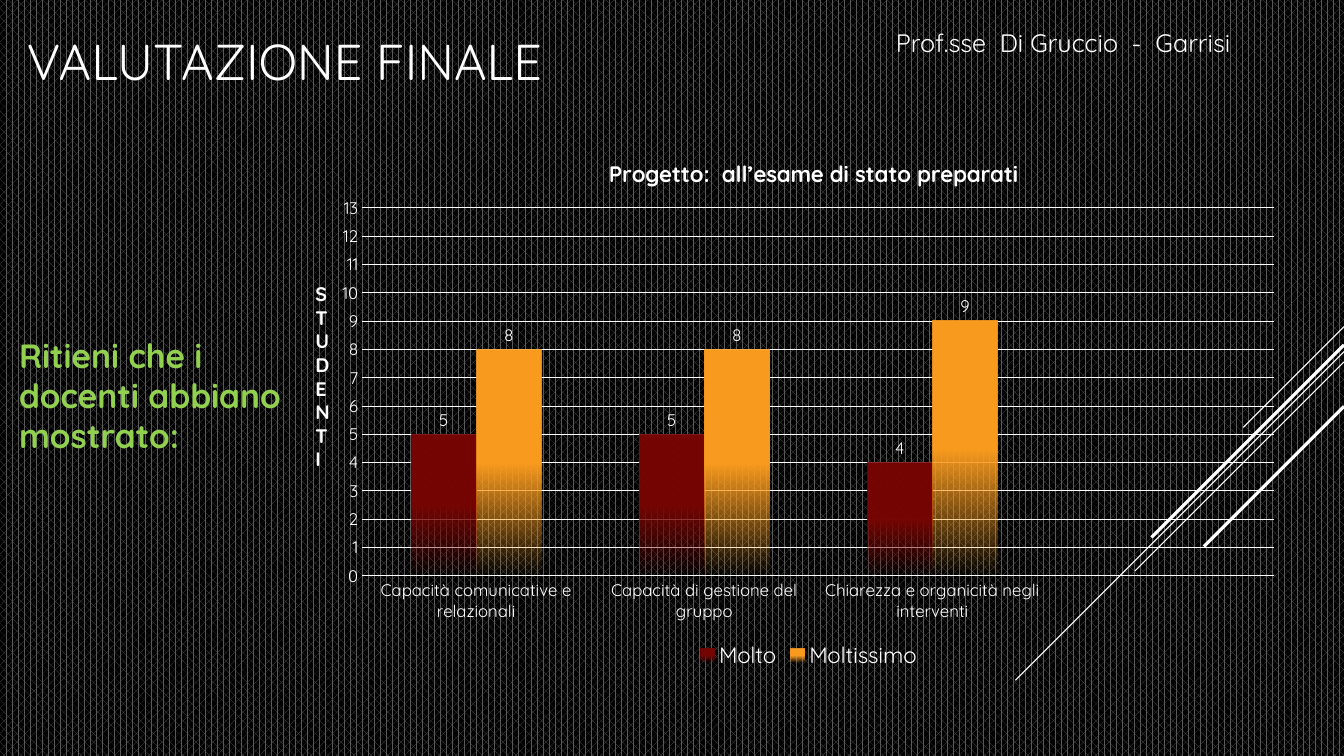
from lxml.etree import SubElement
from pptx import Presentation
from pptx.chart.data import CategoryChartData
from pptx.dml.color import RGBColor
from pptx.enum.chart import XL_CHART_TYPE, XL_LABEL_POSITION, XL_LEGEND_POSITION, XL_TICK_MARK
from pptx.enum.dml import MSO_PATTERN
from pptx.enum.shapes import MSO_CONNECTOR
from pptx.enum.text import MSO_ANCHOR
from pptx.oxml import parse_xml
from pptx.oxml.ns import nsdecls, qn
from pptx.util import Cm, Pt

FONT = "Quicksand"
WHITE, GREEN = "FFFFFF", "92D050"
SLIDE_WIDTH, SLIDE_HEIGHT = 33.87, 19.05

TEXTS = [
    (["VALUTAZIONE FINALE"], (0.43, 0.36, 18.64, 2.34),
     {"size": 36, "anchor": MSO_ANCHOR.MIDDLE}),
    (["Ritieni che i docenti abbiano mostrato:"], (0.23, 8.31, 7.95, 3.33),
     {"size": 24, "color": GREEN, "bold": True}),
    (["Prof.sse  Di Gruccio  -  Garrisi"], (22.33, 0.56, 11.53, 1.02), {"size": 18}),
    (list("STUDENTI"), (7.7, 6.99, 0.89, 5.05), {"size": 14, "bold": True, "wrap": False}),
]

DIAGONALS = [
    (8.23, 2.54, 0.75),
    (8.86, 8.28, 0.75),
    (9.12, 5.27, 0.75),
    (8.69, 4.85, 2.25),
    (10.24, 3.53, 2.25),
]

CHART_TITLE = "Progetto:  all’esame di stato preparati"
CHART_FRAME = (8.15, 3.33, 24.46, 13.64)
CATEGORIES = [
    "Capacità comunicative e relazionali",
    "Capacità di gestione del gruppo",
    "Chiarezza e organicità negli interventi",
    "",
]
SERIES = [
    ("Molto", [5, 5, 4, None], "760603"),
    ("Moltissimo", [8, 8, 9, None], "FA9C1F"),
]
TITLE_LAYOUT = {"x": 0.29, "y": 0.04}
PLOT_LAYOUT = {"x": 0.04, "y": 0.14, "w": 0.94, "h": 0.68}


def paint(color_format, value):
    color_format.rgb = RGBColor.from_string(value)


def style(font, size, color=WHITE, bold=False):
    font.name, font.size, font.bold = FONT, Pt(size), bold
    font.fill.solid()
    paint(font.fill.fore_color, color)


def add_text(page, lines, frame, wrap=True, anchor=MSO_ANCHOR.TOP, **look):
    box = page.shapes.add_textbox(*map(Cm, frame))
    text = box.text_frame
    text.word_wrap, text.vertical_anchor = wrap, anchor
    for index, line in enumerate(lines):
        para = text.add_paragraph() if index else text.paragraphs[0]
        span = para.add_run()
        span.text = line
        style(span.font, **look)


def add_diagonal(page, top, run, weight):
    line = page.shapes.add_connector(
        MSO_CONNECTOR.STRAIGHT, Cm(SLIDE_WIDTH), Cm(top), Cm(SLIDE_WIDTH - run), Cm(top + run))
    paint(line.line.color, WHITE)
    line.line.width = Pt(weight)
    SubElement(line.element.spPr, qn("a:effectLst"))


def place(parent, before, sizes, target=""):
    for old in parent.findall(qn("c:layout")):
        parent.remove(old)
    modes = "".join(f'<c:{key}Mode val="edge"/>' for key in "xy")
    values = "".join(f'<c:{key} val="{value}"/>' for key, value in sizes.items())
    layout = parse_xml(
        f'<c:layout {nsdecls("c")}><c:manualLayout>{target}{modes}{values}'
        "</c:manualLayout></c:layout>")
    parent.insert(before, layout)


def add_results(page):
    data = CategoryChartData()
    data.categories = CATEGORIES
    for name, values, _ in SERIES:
        data.add_series(name, values)
    chart = page.shapes.add_chart(
        XL_CHART_TYPE.COLUMN_CLUSTERED, *map(Cm, CHART_FRAME), data).chart
    style(chart.font, 10)

    chart.has_title = True
    heading = chart.chart_title.text_frame
    heading.text = CHART_TITLE
    style(heading.paragraphs[0].runs[0].font, 16, bold=True)
    chart.chart_title.include_in_layout = False
    place(chart.element.xpath("c:chart/c:title")[0], 1, TITLE_LAYOUT)
    place(chart.element.xpath(".//c:plotArea")[0], 0, PLOT_LAYOUT,
          '<c:layoutTarget val="inner"/>')

    chart.has_legend = True
    chart.legend.position = XL_LEGEND_POSITION.BOTTOM
    chart.legend.include_in_layout = False
    style(chart.legend.font, 16)

    for axis in (chart.category_axis, chart.value_axis):
        axis.major_tick_mark = axis.minor_tick_mark = XL_TICK_MARK.NONE
        axis.format.line.fill.background()
        style(axis.tick_labels.font, 12)
    scale = chart.value_axis
    scale.minimum_scale, scale.maximum_scale, scale.major_unit = 0, 13, 1
    scale.has_major_gridlines = True
    grid = scale.major_gridlines.format.line
    paint(grid.color, WHITE)
    grid.width = Pt(0.75)

    plot = chart.plots[0]
    plot.gap_width, plot.vary_by_categories = 150, False
    for series, (_, _, color) in zip(plot.series, SERIES):
        fill = series.format.fill
        fill.gradient()
        fill.gradient_angle = 270
        for stop, position in zip(fill.gradient_stops, (0.5, 1)):
            stop.position = position
            paint(stop.color, color)
        labels = series.data_labels
        labels.show_value = True
        labels.position = XL_LABEL_POSITION.OUTSIDE_END
        style(labels.font, 12)
    for faded in chart.element.xpath(".//c:ser//a:gs[2]/a:srgbClr"):
        SubElement(faded, qn("a:alpha")).set("val", "0")


def main():
    deck = Presentation()
    deck.slide_width, deck.slide_height = Cm(SLIDE_WIDTH), Cm(SLIDE_HEIGHT)
    page = deck.slides.add_slide(deck.slide_layouts[6])
    backdrop = page.background.fill
    backdrop.patterned()
    backdrop.pattern = MSO_PATTERN.PERCENT_60
    paint(backdrop.fore_color, "595959")
    paint(backdrop.back_color, "000000")
    for diagonal in DIAGONALS:
        add_diagonal(page, *diagonal)
    add_results(page)
    for lines, frame, look in TEXTS:
        add_text(page, lines, frame, **look)
    deck.save("out.pptx")


if __name__ == "__main__":
    main()
